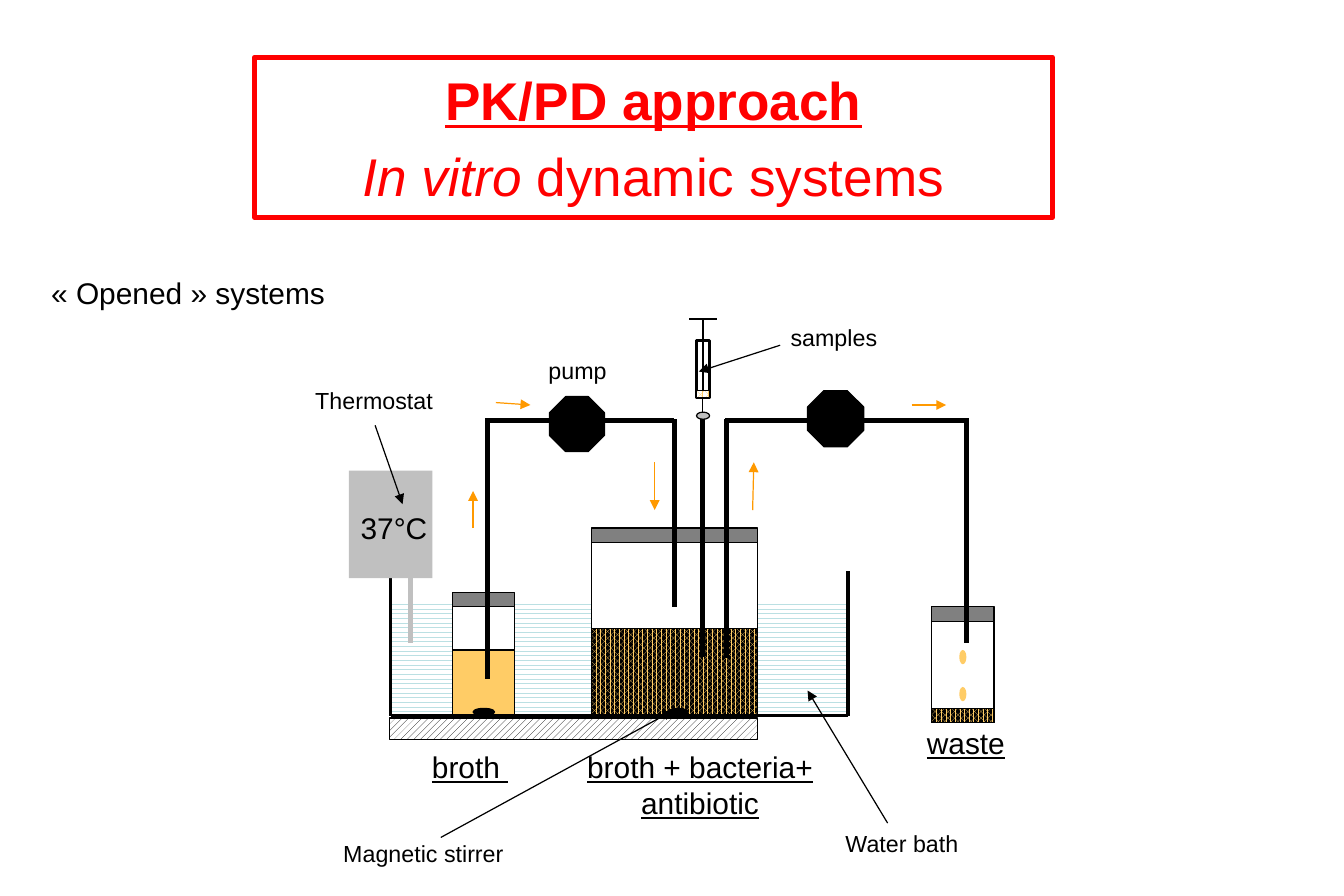
from lxml import etree
from pptx import Presentation
from pptx.dml.color import RGBColor
from pptx.enum.dml import MSO_PATTERN
from pptx.enum.shapes import MSO_CONNECTOR, MSO_SHAPE
from pptx.enum.text import MSO_ANCHOR, MSO_AUTO_SIZE, PP_ALIGN
from pptx.oxml.ns import qn
from pptx.util import Inches, Pt

RECT, OVAL, OCTAGON = MSO_SHAPE.RECTANGLE, MSO_SHAPE.OVAL, MSO_SHAPE.OCTAGON
STRAIGHT = MSO_CONNECTOR.STRAIGHT
LEFT, CENTER = PP_ALIGN.LEFT, PP_ALIGN.CENTER
TOP_SIDE = 0


class Theme:
    font = "Arial"
    title, black, white = "FF0000", "000000", "FFFFFF"
    flow, broth, water = "FF9900", "FFCC66", "BBE0E3"
    lid, silver = "808080", "C0C0C0"
    title_size, name_size, note_size = 32, 18, 14
    thin, medium, wall, thick = 0.75, 1.5, 2.25, 3


# Fills: a colour, or (pattern, foreground, background)
WATER = (MSO_PATTERN.WAVE, Theme.water, Theme.white)
CULTURE = (MSO_PATTERN.PERCENT_75, Theme.broth, Theme.black)
SAMPLE = (MSO_PATTERN.PERCENT_70, Theme.broth, Theme.white)
HATCH = (MSO_PATTERN.WIDE_UPWARD_DIAGONAL, Theme.black, Theme.white)

# Title: paragraphs of (text, format) runs
TITLE_BOX = (2.13, 0.48, 6.68, 1.34)
TITLE = [
    [("PK/PD approach", {"bold": True, "underline": True})],
    [("In vitro ", {"bold": False, "italic": True}), ("dynamic systems", {"bold": False})],
]

# Vessels: left, lid top, width, bottom, liquid top, liquid fill
LID_HEIGHT = 0.12
VESSELS = [
    (3.79, 4.96, 0.52, 5.99, 5.44, Theme.broth),
    (4.95, 4.42, 1.39, 5.99, 5.26, CULTURE),
    (7.8, 5.08, 0.52, 6.05, 5.93, CULTURE),
]

# Tubing and bath walls: x1, y1, x2, y2
PIPE_TOP = 3.52
PIPES = [
    (4.08, 5.68, 4.08, 3.51), (5.65, 5.08, 5.65, 3.51),
    (6.08, 5.51, 6.08, 3.51), (8.09, 5.38, 8.09, 3.51),
    (5.64, PIPE_TOP, 4.06, PIPE_TOP), (8.11, PIPE_TOP, 6.07, PIPE_TOP),
    (5.88, 5.5, 5.88, 3.45),
]
BATH_LEFT, BATH_RIGHT, BATH_TOP, BATH_FLOOR = 3.27, 7.1, 4.78, 5.99
BATH_WALLS = [
    (BATH_LEFT, BATH_TOP, BATH_LEFT, BATH_FLOOR),
    (BATH_LEFT, BATH_FLOOR, BATH_RIGHT, BATH_FLOOR),
    (BATH_RIGHT, BATH_TOP, BATH_RIGHT, BATH_FLOOR),
]

# Equipment: kind, box, fill, outline width
EQUIPMENT = [
    (RECT, (3.26, 6.01, 3.08, 0.18), HATCH, Theme.thin),
    (OCTAGON, (4.6, 3.32, 0.46, 0.46), Theme.black, Theme.thin),
    (OCTAGON, (6.76, 3.27, 0.47, 0.47), Theme.black, Theme.thin),
    (OVAL, (3.96, 5.93, 0.18, 0.06), Theme.black, Theme.thin),
    (OVAL, (5.59, 5.93, 0.17, 0.06), Theme.black, Theme.thin),
    (OVAL, (8.03, 5.44, 0.06, 0.12), Theme.broth, None),
    (OVAL, (8.03, 5.75, 0.06, 0.12), Theme.broth, None),
    (RECT, (2.92, 3.94, 0.7, 0.9), Theme.silver, None),
    (OVAL, (5.83, 3.45, 0.11, 0.06), Theme.silver, Theme.thin),
]

# Arrows: x1, y1, x2, y2
FLOW_ARROWS = [
    (4.15, 3.37, 4.44, 3.39), (3.96, 4.42, 3.96, 4.11), (5.48, 3.87, 5.48, 4.27),
    (6.3, 4.27, 6.31, 3.87), (7.63, 3.39, 7.92, 3.39),
]
POINTERS = [
    (7.43, 6.89, 6.76, 5.78), (3.69, 7.01, 5.63, 5.95),
    (6.53, 2.89, 5.85, 3.11), (3.14, 3.56, 3.37, 4.22),
]

# Labels: box, alignment, (text, format) runs
NAME = {"size": Pt(Theme.name_size)}
NOTE = {"size": Pt(Theme.note_size)}
VESSEL_NAME = {**NAME, "underline": True}
LABELS = [
    ((0.33, 2.25, 2.73, 0.4), LEFT, [("« Opened » systems", NAME)]),
    ((2.54, 3.13, 1.58, 0.43), LEFT, [("Thermostat", NOTE), (" ", NAME)]),
    ((2.92, 4.22, 0.9, 0.45), LEFT, [("37°C", NAME)]),
    ((4.27, 2.93, 1.13, 0.43), CENTER, [("pump", NOTE)]),
    ((5.94, 2.66, 2.08, 0.62), CENTER, [("samples", NOTE)]),
    ((3.37, 6.22, 1.13, 0.45), CENTER,
     [("broth", VESSEL_NAME), (" ", {**VESSEL_NAME, "bold": True})]),
    ((4.73, 6.22, 2.26, 0.67), CENTER, [("broth + bacteria+ antibiotic", VESSEL_NAME)]),
    ((7.44, 6.02, 1.29, 0.37), CENTER, [("waste", VESSEL_NAME)]),
    ((1.63, 6.98, 3.83, 0.39), CENTER, [("Magnetic stirrer", NOTE)]),
    ((6.76, 6.89, 1.58, 0.43), CENTER, [("Water bath", NOTE)]),
]


def rgb(colour):
    return RGBColor.from_string(colour)


def inches(values):
    return [Inches(value) for value in values]


def add_runs(paragraph, runs, colour, base):
    for text, style in runs:
        run = paragraph.add_run()
        run.text = text
        run.font.color.rgb = rgb(colour)
        for name, value in {"name": Theme.font, **base, **style}.items():
            setattr(run.font, name, value)


def add_part(slide, kind, box, fill, outline=Theme.thin):
    part = slide.shapes.add_shape(kind, *inches(box))
    part.shadow.inherit = False
    if isinstance(fill, tuple):
        part.fill.patterned()
        part.fill.pattern = fill[0]
        part.fill.fore_color.rgb = rgb(fill[1])
        part.fill.back_color.rgb = rgb(fill[2])
    else:
        part.fill.solid()
        part.fill.fore_color.rgb = rgb(fill)
    if outline is None:
        part.line.fill.background()
    else:
        part.line.color.rgb = rgb(Theme.black)
        part.line.width = Pt(outline)
    return part


def add_line(slide, ends, width, colour=Theme.black, arrow=False):
    line = slide.shapes.add_connector(STRAIGHT, *inches(ends))
    line.line.color.rgb = rgb(colour)
    line.line.width = Pt(width)
    properties = line._element.spPr
    if arrow:
        etree.SubElement(properties.find(qn("a:ln")), qn("a:tailEnd"), type="triangle")
    etree.SubElement(properties, qn("a:effectLst"))
    return line


def add_title(slide):
    title = slide.shapes.title
    title.left, title.top, title.width, title.height = inches(TITLE_BOX)
    title.line.color.rgb = rgb(Theme.title)
    title.line.width = Pt(Theme.thick)
    frame = title.text_frame
    frame.auto_size = MSO_AUTO_SIZE.NONE
    frame.vertical_anchor = MSO_ANCHOR.MIDDLE
    for index, runs in enumerate(TITLE):
        paragraph = frame.add_paragraph() if index else frame.paragraphs[0]
        paragraph.alignment = CENTER
        paragraph.space_before = Pt(7.5 if index else 0)
        add_runs(paragraph, runs, Theme.title, {"size": Pt(Theme.title_size)})


def add_syringe(slide):
    add_line(slide, (5.88, 3.45, 5.88, 3.27), Theme.thin)
    add_part(slide, RECT, (5.83, 2.85, 0.11, 0.48), Theme.white, Theme.medium)
    sample = add_part(slide, RECT, (5.83, 3.27, 0.11, 0.06), SAMPLE)
    plunger = add_line(slide, (5.88, 3.27, 5.88, 2.67), Theme.medium)
    plunger.begin_connect(sample, TOP_SIDE)
    plunger.end_x = plunger.begin_x
    add_line(slide, (5.77, 2.67, 6, 2.67), Theme.medium)


def main():
    deck = Presentation()
    deck.slide_width, deck.slide_height = inches((11.25, 7.5))
    slide = deck.slides.add_slide(deck.slide_layouts[5])
    add_title(slide)

    # Water bath and vessels
    add_part(slide, RECT, (BATH_LEFT, 5.02, 3.84, 0.97), WATER, None)
    for left, top, width, bottom, level, liquid in VESSELS:
        body = top + LID_HEIGHT
        add_part(slide, RECT, (left, body, width, bottom - body), Theme.white)
        add_part(slide, RECT, (left, level, width, bottom - level), liquid)
        add_part(slide, RECT, (left, top, width, LID_HEIGHT), Theme.lid)

    # Tubing, walls, pumps, stirrers and thermostat
    for ends in PIPES:
        add_line(slide, ends, Theme.thick)
    for ends in BATH_WALLS:
        add_line(slide, ends, Theme.wall)
    for equipment in EQUIPMENT:
        add_part(slide, *equipment)
    add_line(slide, (3.44, 4.78, 3.44, 5.38), Theme.thick, Theme.silver)
    add_syringe(slide)

    # Arrows and labels
    for colour, arrows in ((Theme.flow, FLOW_ARROWS), (Theme.black, POINTERS)):
        for ends in arrows:
            add_line(slide, ends, Theme.thin, colour, arrow=True)
    for box, alignment, runs in LABELS:
        frame = slide.shapes.add_textbox(*inches(box)).text_frame
        frame.word_wrap = True
        frame.paragraphs[0].alignment = alignment
        add_runs(frame.paragraphs[0], runs, Theme.black, {})

    deck.save("out.pptx")


if __name__ == "__main__":
    main()
